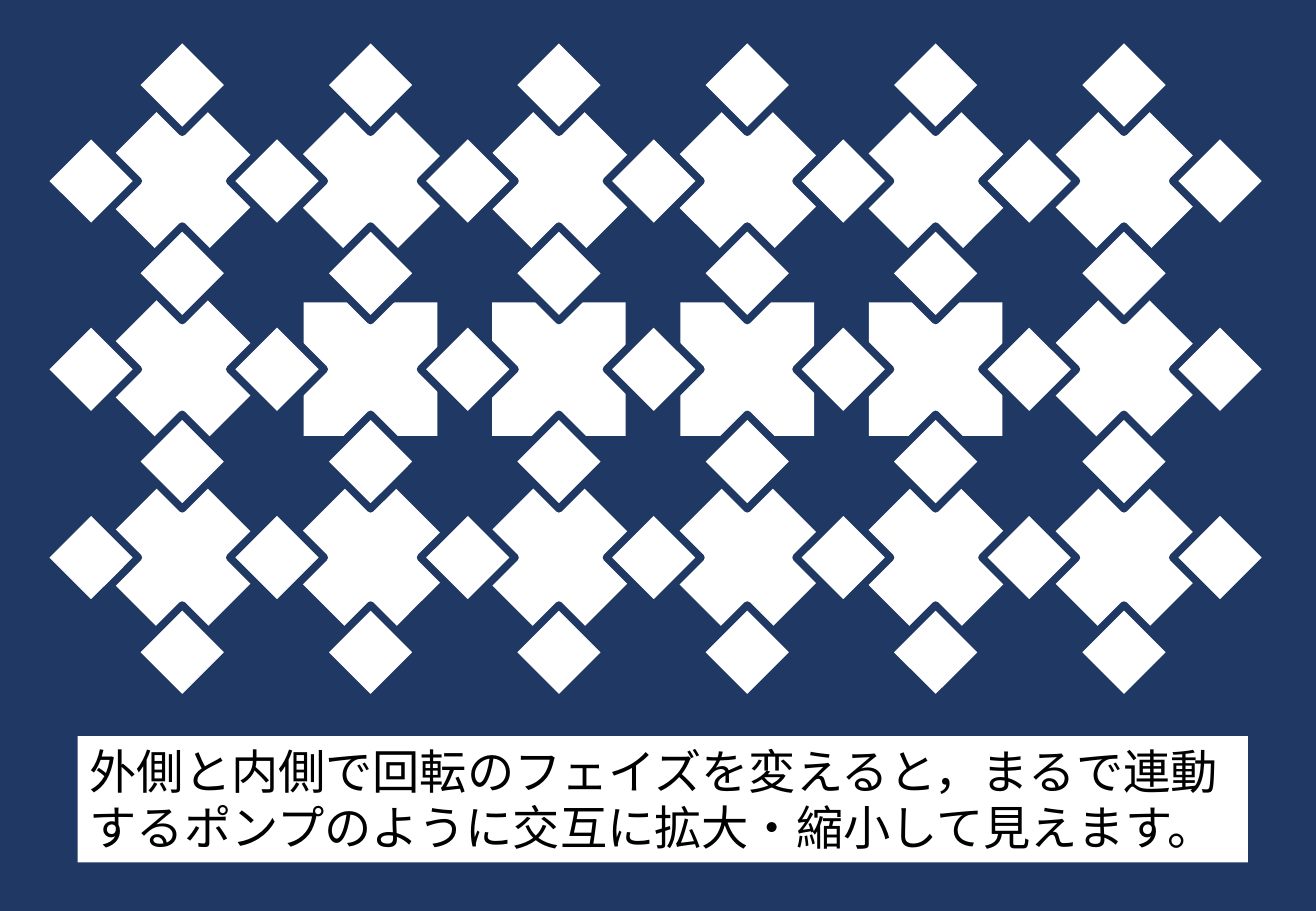
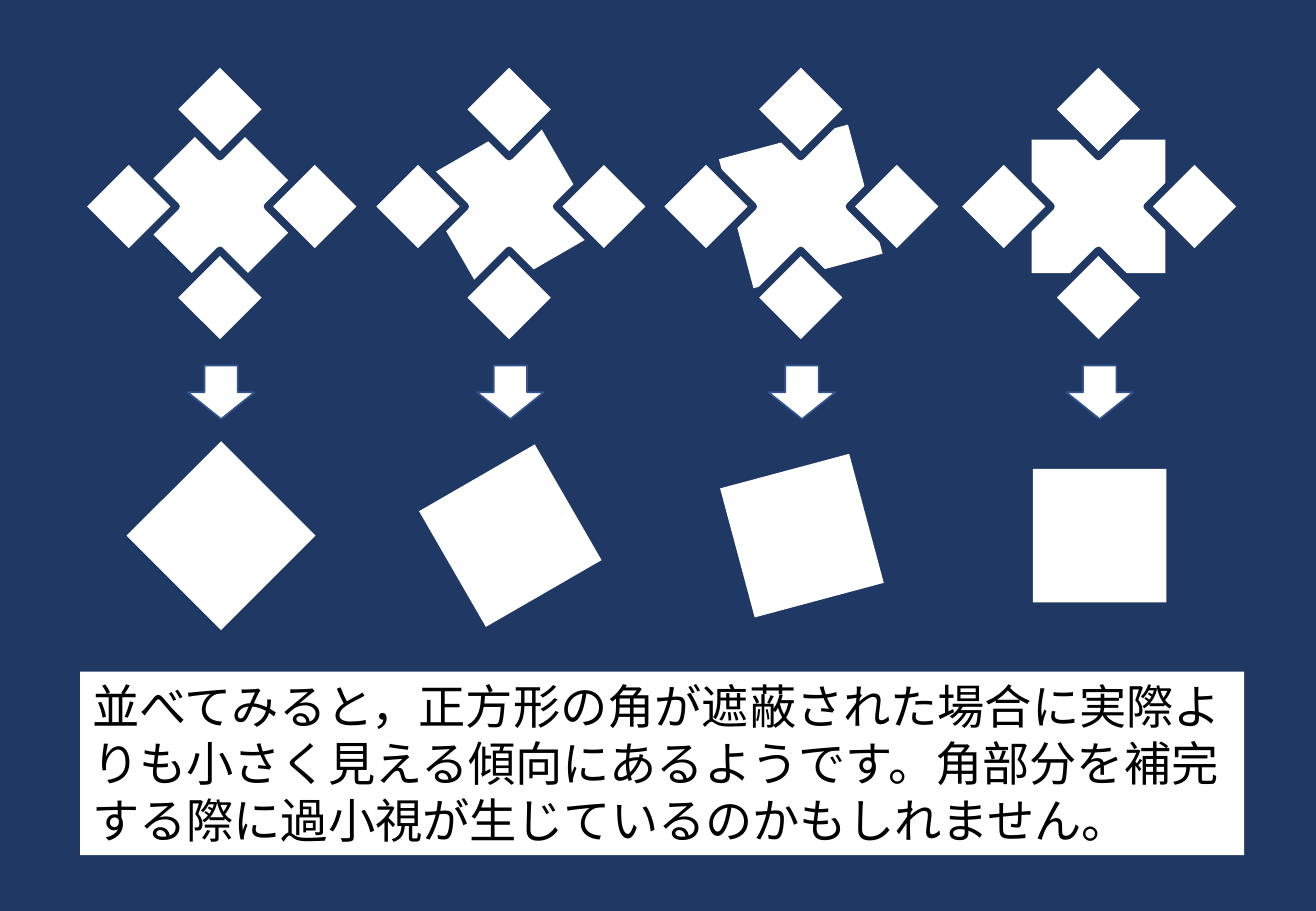
import pptx
import pptx.dml.color
import pptx.enum.shapes
import pptx.enum.text
import pptx.util

NAVY = pptx.dml.color.RGBColor(0x20, 0x38, 0x64)
WHITE = pptx.dml.color.RGBColor(0xFF, 0xFF, 0xFF)
BLACK = pptx.dml.color.RGBColor(0x00, 0x00, 0x00)
ARROW_EDGE = pptx.dml.color.RGBColor(0x32, 0x54, 0x91)
SQUARE = pptx.enum.shapes.MSO_SHAPE.RECTANGLE
DOWN_ARROW = pptx.enum.shapes.MSO_SHAPE.DOWN_ARROW

CELL = 1.55
LARGE = 1.1
SMALL = LARGE / 2
DIAMOND = 315


def add_figure(slide, center_x, center_y, width, height=None, kind=SQUARE,
               angle=0, edge=None, edge_width=4.5):
    height = height or width
    figure = slide.shapes.add_shape(
        kind,
        pptx.util.Inches(center_x - width / 2), pptx.util.Inches(center_y - height / 2),
        pptx.util.Inches(width), pptx.util.Inches(height))
    figure.shadow.inherit = False
    figure.rotation = angle
    figure.fill.solid()
    figure.fill.fore_color.rgb = WHITE
    if edge is None:
        figure.line.fill.background()
    else:
        figure.line.color.rgb = edge
        figure.line.width = pptx.util.Pt(edge_width)


def add_caption(slide, text, left, top, width, height, size=28, font="Calibri",
                color=BLACK, wrap=True):
    caption = slide.shapes.add_textbox(*map(pptx.util.Inches, (left, top, width, height)))
    caption.fill.solid()
    caption.fill.fore_color.rgb = WHITE
    frame = caption.text_frame
    frame.word_wrap = wrap
    frame.auto_size = pptx.enum.text.MSO_AUTO_SIZE.SHAPE_TO_FIT_TEXT
    frame.text = text
    for paragraph in frame.paragraphs:
        paragraph.font.size = pptx.util.Pt(size)
        paragraph.font.name = font
        paragraph.font.color.rgb = color


deck = pptx.Presentation()
deck.slide_width = pptx.util.Inches(10.83)
deck.slide_height = pptx.util.Inches(7.5)
backdrop = deck.slide_master.background.fill
backdrop.solid()
backdrop.fore_color.rgb = NAVY
blank = deck.slide_layouts[6]

pump = deck.slides.add_slide(blank)
columns = [1.5 + CELL * column for column in range(6)]
rows = [1.49 + CELL * row for row in range(3)]
for row, y in enumerate(rows):
    for column, x in enumerate(columns):
        inner = row == 1 and 1 <= column <= 4
        add_figure(pump, x, y, LARGE, angle=0 if inner else DIAMOND)

for y in rows:
    for x in (0.75, 2.28, 3.85, 5.38, 6.94, 8.47, 10.04):
        add_figure(pump, x, y, SMALL, angle=DIAMOND, edge=NAVY)
for x in columns:
    for y in (0.7, 2.25, 3.8, 5.37):
        add_figure(pump, x, y, SMALL, angle=DIAMOND, edge=NAVY)

add_caption(pump, "外側と内側で回転のフェイズを変えると，まるで連動\n"
            "するポンプのように交互に拡大・縮小して見えます。",
            0.64, 6.06, 9.63, 1.04, wrap=False)

comparison = deck.slides.add_slide(blank)
occluded_y, arrow_y, revealed_y = 1.7, 3.23, 4.41
phases = [
    (1.81, 1.06, 2.59, 315),
    (4.19, 3.44, 4.97, 330),
    (6.59, 5.81, 7.38, 345),
    (9.04, 8.26, 9.83, 0),
]
for x, left_x, right_x, angle in phases:
    add_figure(comparison, x, occluded_y, LARGE, angle=angle)
    for occluder_x, occluder_y in ((x, 0.9), (right_x, occluded_y),
                                   (x, 2.45), (left_x, occluded_y)):
        add_figure(comparison, occluder_x, occluder_y, SMALL, angle=DIAMOND, edge=NAVY)
    add_figure(comparison, x + 0.01, arrow_y, SMALL, 0.44, kind=DOWN_ARROW,
               edge=ARROW_EDGE, edge_width=1)
    add_figure(comparison, x + 0.01, revealed_y, LARGE, angle=angle)

add_caption(comparison, "並べてみると，正方形の角が遮蔽された場合に実際よりも小さく見える"
            "傾向にあるようです。角部分を補完する際に過小視が生じているのかもしれません。",
            0.66, 5.53, 9.58, 1.51)

deck.save("out.pptx")
